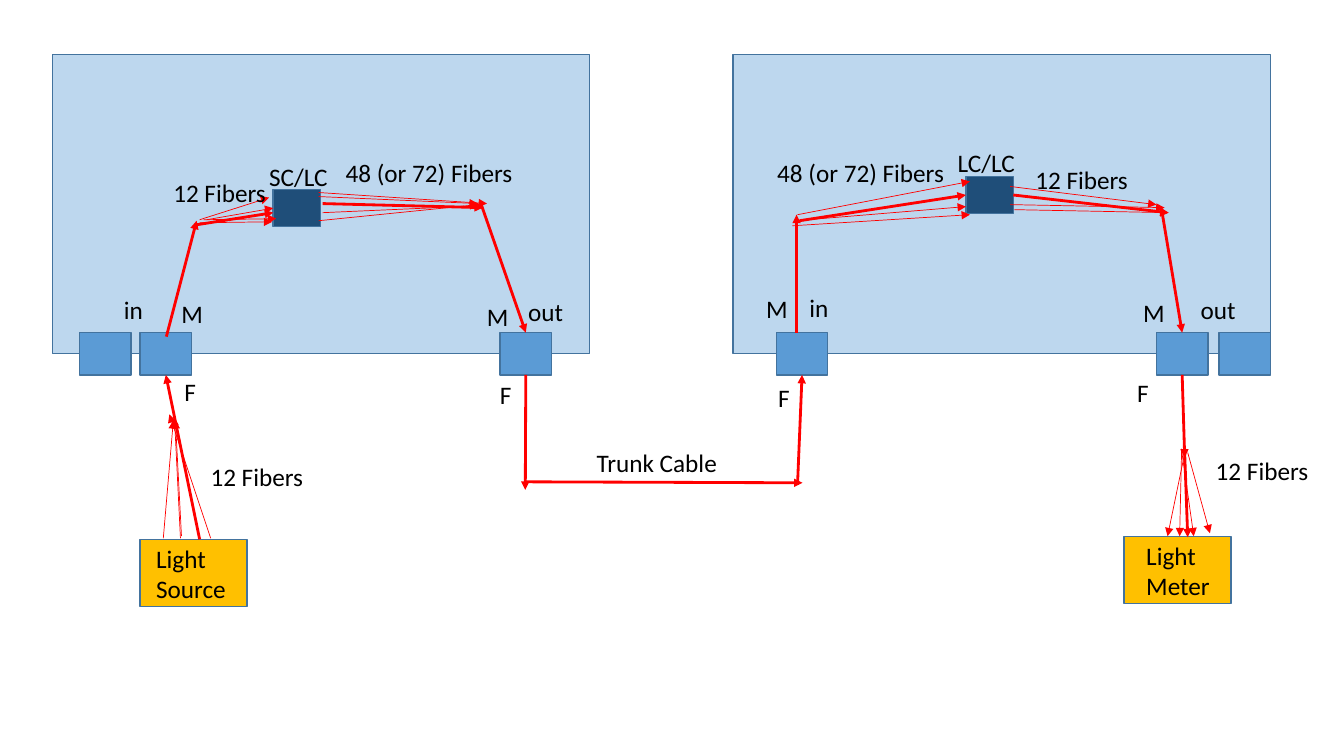
from dataclasses import dataclass

from lxml.etree import SubElement
from pptx import Presentation
from pptx.dml.color import RGBColor
from pptx.enum.shapes import MSO_CONNECTOR as Connector, MSO_SHAPE as Shape
from pptx.enum.text import MSO_AUTO_SIZE as AutoSize
from pptx.oxml.ns import qn
from pptx.util import Inches, Pt


@dataclass(frozen=True)
class Theme:
    cabinet: str = "BDD7EE"
    port: str = "5B9BD5"
    splice: str = "1F4E79"
    tester: str = "FFC000"
    outline: str = "43739E"
    fiber: str = "FF0000"
    text: str = "000000"
    font: str = "Calibri"
    text_size: float = 18
    outline_width: float = 1
    cable_width: float = 2
    strand_width: float = 0.5


THEME = Theme()
TOP, LEFT, BOTTOM, RIGHT = range(4)

# Size of each kind of box: width, height
SIZES = {
    "cabinet": (5.33, 2.97),
    "port": (0.51, 0.42),
    "splice": (0.47, 0.37),
    "tester": (1.06, 0.67),
}
CABINET_TOP, PORT_TOP = 0.54, 3.3

# Name: kind, left, top
BOXES = {
    "left cabinet": ("cabinet", 0.52, CABINET_TOP),
    "right cabinet": ("cabinet", 7.27, CABINET_TOP),
    "left spare": ("port", 0.79, PORT_TOP),
    "left in": ("port", 1.39, PORT_TOP),
    "left out": ("port", 4.96, PORT_TOP),
    "right in": ("port", 7.7, PORT_TOP),
    "right out": ("port", 11.47, PORT_TOP),
    "right spare": ("port", 12.09, PORT_TOP),
    "SC/LC": ("splice", 2.71, 1.88),
    "LC/LC": ("splice", 9.58, 1.75),
    "source": ("tester", 1.39, 5.35),
    "meter": ("tester", 11.15, 5.32),
}

# Each end is a point (x, y) or a box side (name, side)
CABLES = [
    ((1.98, 5.35), ("left in", BOTTOM)),
    ((1.65, 3.34), (1.95, 2.19)),
    ((1.95, 2.23), (2.71, 2.11)),
    ((3.2, 2.02), (4.79, 2.06)),
    ((4.77, 2.02), ("left out", TOP)),
    (("left out", BOTTOM), (5.21, 4.86)),
    ((5.21, 4.78), (7.96, 4.79)),
    ((7.91, 4.81), ("right in", BOTTOM)),
    ((7.9, 3.3), (7.9, 2.13)),
    ((7.93, 2.19), ("LC/LC", LEFT)),
    (("LC/LC", RIGHT), (11.59, 2.11)),
    ((11.52, 2.07), ("right out", TOP)),
    (("right out", BOTTOM), (11.75, 4.54)),
    ((11.75, 4.5), (11.78, 5.33)),
]

STRANDS = [
    # source to left cabinet
    ((1.62, 5.34), (1.72, 4.17)),
    ((2.09, 5.34), (1.68, 4.11)),
    ((1.79, 5.34), (1.73, 4.14)),
    ((1.8, 5.32), (1.74, 4.17)),
    # into SC/LC
    ((1.98, 2.21), (2.7, 2.2)),
    ((2.02, 2.18), (2.74, 2.17)),
    ((1.98, 2.18), (2.67, 1.96)),
    ((2.05, 2.18), ("SC/LC", LEFT)),
    # out of SC/LC
    ((3.16, 2.19), (4.74, 2.03)),
    ((3.2, 2.11), (4.79, 2.04)),
    ((3.16, 1.95), (4.74, 2.02)),
    ((3.16, 1.91), (4.83, 2.02)),
    # into LC/LC
    ((7.89, 2.19), (9.58, 2.05)),
    ((7.91, 2.13), (9.62, 1.8)),
    ((7.86, 2.24), (9.62, 2.13)),
    # out of LC/LC
    ((10.06, 2.08), (11.59, 2.11)),
    ((10.02, 2.03), (11.55, 2.06)),
    ((10.02, 1.85), (11.47, 2.03)),
    # right cabinet to meter
    ((11.72, 4.45), (11.7, 5.32)),
    ((11.72, 4.47), (11.84, 5.32)),
    ((11.78, 4.49), (12, 5.29)),
    ((11.76, 4.45), (11.58, 5.32)),
]

# Lines of text, left, top, width
LABELS = [
    (["12 Fibers"], 1.62, 1.71, 1.22),
    (["SC/LC"], 2.57, 1.55, 1.01),
    (["48 (or 72) Fibers"], 3.33, 1.51, 2.03),
    (["in"], 1.13, 2.87, 0.76),
    (["M"], 1.7, 2.91, 0.48),
    (["F"], 1.73, 3.68, 0.56),
    (["M"], 4.73, 2.94, 0.48),
    (["out"], 5.14, 2.89, 0.79),
    (["F"], 4.86, 3.71, 0.56),
    (["12 Fibers"], 1.99, 4.53, 1.3),
    (["Light", "Source"], 1.45, 5.34, 1.18),
    (["Trunk Cable"], 5.82, 4.39, 1.67),
    (["48 (or 72) Fibers"], 7.61, 1.51, 1.91),
    (["LC/LC"], 9.4, 1.41, 1.01),
    (["12 Fibers"], 10.17, 1.58, 1.29),
    (["M"], 7.5, 2.86, 0.48),
    (["in"], 7.93, 2.85, 0.8),
    (["F"], 7.62, 3.74, 0.56),
    (["M"], 11.24, 2.9, 0.48),
    (["out"], 11.81, 2.87, 0.63),
    (["F"], 11.18, 3.69, 0.56),
    (["12 Fibers"], 11.96, 4.47, 1.24),
    (["Light", "Meter"], 11.27, 5.31, 1.18),
]


def color(value):
    return RGBColor.from_string(value)


def add_box(page, kind, left, top):
    width, height = SIZES[kind]
    box = page.shapes.add_shape(
        Shape.RECTANGLE, Inches(left), Inches(top), Inches(width), Inches(height))
    box.shadow.inherit = False
    box.fill.solid()
    box.fill.fore_color.rgb = color(getattr(THEME, kind))
    box.line.color.rgb = color(THEME.outline)
    box.line.width = Pt(THEME.outline_width)
    return box


def add_arrow(page, boxes, start, end, width):
    """Draw an arrow; an end given as a box side is joined to that box."""
    arrow = page.shapes.add_connector(Connector.STRAIGHT, 0, 0, 0, 0)
    if start[0] in boxes:
        arrow.begin_connect(boxes[start[0]], start[1])
    else:
        arrow.begin_x, arrow.begin_y = map(Inches, start)
    if end[0] in boxes:
        arrow.end_connect(boxes[end[0]], end[1])
    else:
        arrow.end_x, arrow.end_y = map(Inches, end)
    arrow.line.color.rgb = color(THEME.fiber)
    arrow.line.width = Pt(width)
    SubElement(arrow.line._get_or_add_ln(), qn("a:tailEnd"), type="triangle")
    SubElement(arrow._element.spPr, qn("a:effectLst"))


def add_label(page, lines, left, top, width):
    height = 0.1 + 0.3 * len(lines)
    box = page.shapes.add_textbox(
        Inches(left), Inches(top), Inches(width), Inches(height))
    frame = box.text_frame
    frame.word_wrap = True
    frame.auto_size = AutoSize.SHAPE_TO_FIT_TEXT
    for index, line in enumerate(lines):
        para = frame.add_paragraph() if index else frame.paragraphs[0]
        span = para.add_run()
        span.text = line
        span.font.name = THEME.font
        span.font.size = Pt(THEME.text_size)
        span.font.color.rgb = color(THEME.text)


def main():
    deck = Presentation()
    deck.slide_width, deck.slide_height = Inches(13.33), Inches(7.5)
    page = deck.slides.add_slide(deck.slide_layouts[6])
    boxes = {name: add_box(page, *place) for name, place in BOXES.items()}
    for routes, width in ((CABLES, THEME.cable_width), (STRANDS, THEME.strand_width)):
        for start, end in routes:
            add_arrow(page, boxes, start, end, width)
    for label in LABELS:
        add_label(page, *label)
    deck.save("out.pptx")


if __name__ == "__main__":
    main()
